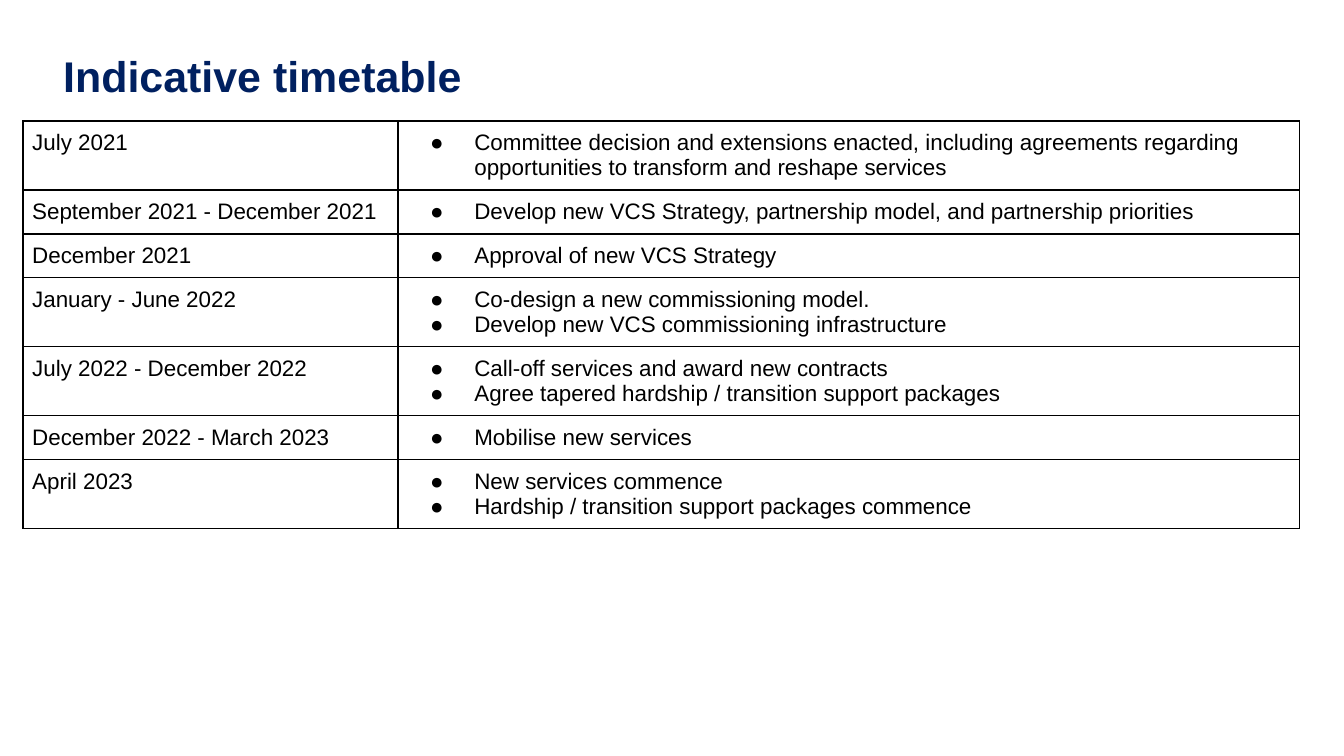
from lxml import etree
from pptx import Presentation
from pptx.dml.color import RGBColor
from pptx.oxml import ns
from pptx.util import Inches, Pt

BLACK = RGBColor(0x00, 0x00, 0x00)
NAVY = RGBColor(0x00, 0x20, 0x60)
FONT = "Arial"
CELL_MARGIN = Inches(0.07)

TIMETABLE = [
    ("July 2021", ["Committee decision and extensions enacted, including agreements "
                   "regarding opportunities to transform and reshape services"]),
    ("September 2021 - December 2021",
     ["Develop new VCS Strategy, partnership model, and partnership priorities"]),
    ("December 2021", ["Approval of new VCS Strategy"]),
    ("January - June 2022", ["Co-design a new commissioning model.",
                             "Develop new VCS commissioning infrastructure"]),
    ("July 2022 - December 2022", ["Call-off services and award new contracts",
                                   "Agree tapered hardship / transition support packages"]),
    ("December 2022 - March 2023", ["Mobilise new services"]),
    ("April 2023", ["New services commence",
                    "Hardship / transition support packages commence"]),
]


def add_bullet(paragraph):
    properties = paragraph._p.get_or_add_pPr()
    properties.set("marL", str(Inches(0.5)))
    properties.set("indent", str(Inches(-0.33)))
    color = etree.SubElement(properties, ns.qn("a:buClr"))
    etree.SubElement(color, ns.qn("a:srgbClr"), val=str(BLACK))
    etree.SubElement(properties, ns.qn("a:buFont"), typeface=FONT)
    etree.SubElement(properties, ns.qn("a:buChar"), char="●")


def format_cell(cell):
    """Set margins, black borders on all sides and no fill."""
    cell.margin_left = cell.margin_right = CELL_MARGIN
    cell.margin_top = cell.margin_bottom = CELL_MARGIN
    properties = cell._tc.get_or_add_tcPr()
    for side in ("lnL", "lnR", "lnT", "lnB"):
        line = etree.SubElement(properties, ns.qn(f"a:{side}"), w=str(Pt(1)))
        fill = etree.SubElement(line, ns.qn("a:solidFill"))
        etree.SubElement(fill, ns.qn("a:srgbClr"), val=str(BLACK))
    cell.fill.background()


presentation = Presentation()
presentation.slide_width = Inches(10)
presentation.slide_height = presentation.slide_width * 9 // 16
slide = presentation.slides.add_slide(presentation.slide_layouts[6])

# Timetable
table = slide.shapes.add_table(
    len(TIMETABLE), 2, Inches(0.17), Inches(0.9), Inches(9.5), Inches(3.02)).table
table.first_row = table.horz_banding = False
table.columns[0].width = Inches(2.79)
table.columns[1].width = Inches(6.71)

for row, (period, actions) in enumerate(TIMETABLE):
    table.rows[row].height = Inches(0.01)  # rows grow to fit their text
    for column, lines in enumerate(([period], actions)):
        cell = table.cell(row, column)
        format_cell(cell)
        cell.text = "\n".join(lines)
        for paragraph in cell.text_frame.paragraphs:
            if column == 1:
                add_bullet(paragraph)
            paragraph.font.name = FONT
            paragraph.font.size = Pt(12)
            paragraph.font.color.rgb = BLACK

# Title
title = slide.shapes.add_textbox(Inches(0.39), Inches(0.3), Inches(9.21), Inches(0.63))
frame = title.text_frame
frame.word_wrap = True
frame.margin_left = frame.margin_right = frame.margin_bottom = Inches(0.08)
frame.margin_top = Inches(0.07)
paragraph = frame.paragraphs[0]
paragraph.text = "Indicative timetable"
paragraph.font.name = FONT
paragraph.font.size = Pt(23)
paragraph.font.bold = True
paragraph.font.color.rgb = NAVY

presentation.save("out.pptx")
